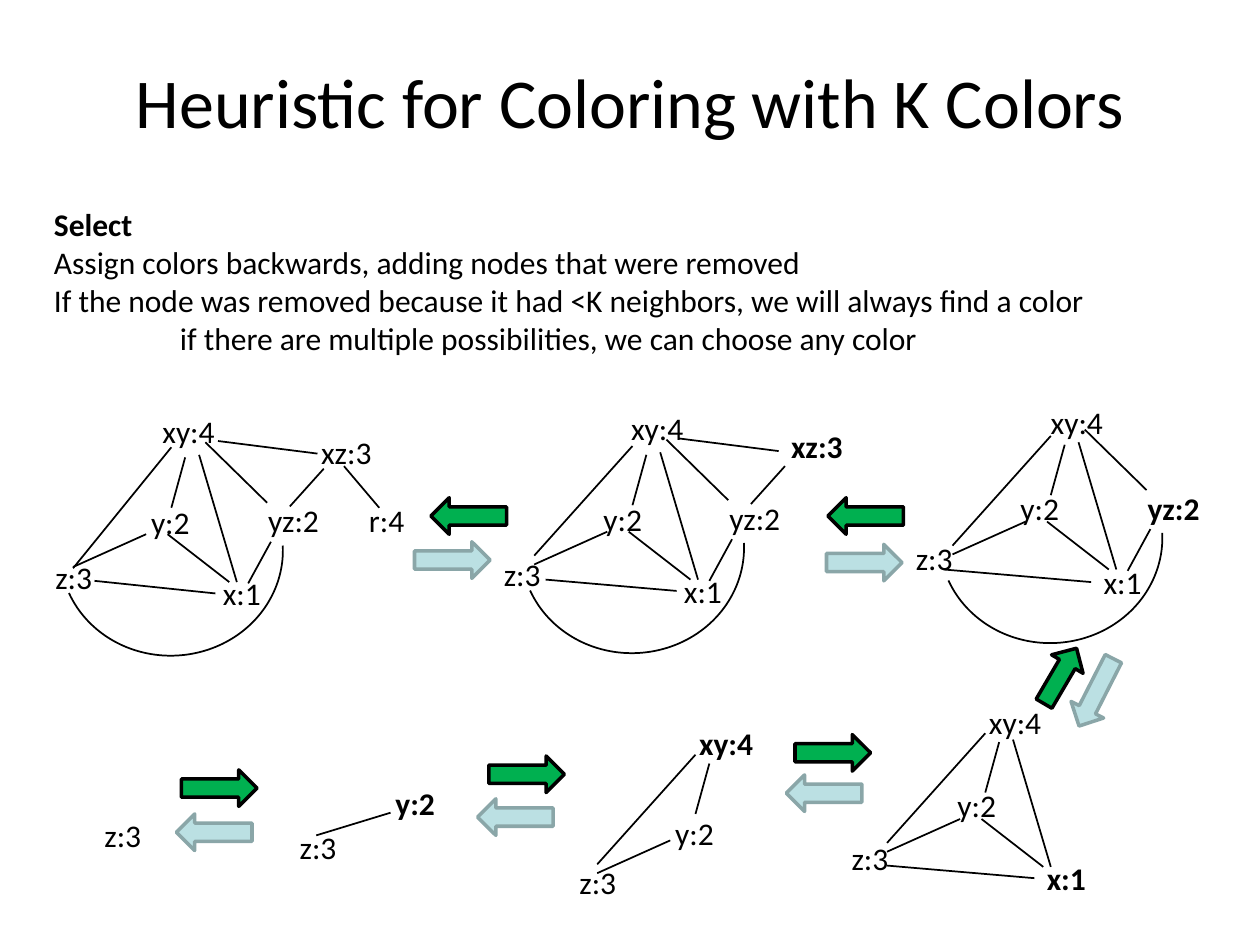
from typing import NamedTuple

from lxml.etree import SubElement
from pptx import Presentation
from pptx.dml.color import RGBColor
from pptx.enum.shapes import MSO_CONNECTOR as Link, MSO_SHAPE as Form
from pptx.enum.text import MSO_ANCHOR as Anchor, MSO_AUTO_SIZE as Fit, PP_ALIGN as Align
from pptx.oxml.ns import qn
from pptx.util import Inches, Pt

COLORS = {"ink": "000000", "green": "00B050", "pale": "BBE0E3", "gray": "8AA6A8"}
FONT = "Calibri"


class Node(NamedTuple):
    text: str
    x: float
    y: float
    bold: bool = False


class Edge(NamedTuple):
    x1: float
    y1: float
    x2: float
    y2: float


class Graph(NamedTuple):
    x: float
    y: float
    nodes: list[Node]
    edges: str = ""
    extra: tuple[Edge, ...] = ()
    arc: bool = False


class Arrow(NamedTuple):
    x: float
    y: float
    turn: float = 0
    wide: float = 0.6


EDGES = {
    "xy-x": Edge(0, 0, 0.3, 1.01),
    "y-x": Edge(-0.25, 0.63, 0.24, 1.01),
    "xy-y": Edge(-0.11, 0.02, -0.22, 0.42),
    "z-y": Edge(-1, 0.89, -0.42, 0.63),
    "xy-z": Edge(-0.22, -0.05, -1, 0.82),
    "xy-yz": Edge(0.05, -0.1, 0.54, 0.38),
    "yz-x": Edge(0.57, 0.69, 0.39, 1.02),
    "xy-xz": Edge(0.15, -0.11, 0.94, -0.01),
    "xz-yz": Edge(0.99, 0.11, 0.72, 0.41),
}
FAN = "xy-y z-y"
CORE = FAN + " xy-x y-x"
RING = CORE + " xy-yz yz-x"
FULL = RING + " xy-xz xz-yz"

GRAPHS = [
    Graph(5.24, 3.59, [
        Node("y:2", 4.69, 3.92), Node("yz:2", 5.69, 3.91), Node("x:1", 5.33, 4.49),
        Node("z:3", 3.9, 4.36), Node("xz:3", 6.18, 3.34, True), Node("xy:4", 4.91, 3.2),
    ], FULL + " xy-z", (Edge(0.13, 1.1, -0.91, 1.01),), True),
    Graph(8.56, 3.51, [
        Node("y:2", 8, 3.83), Node("yz:2", 9.01, 3.83, True), Node("x:1", 8.66, 4.42),
        Node("z:3", 7.17, 4.23), Node("xy:4", 8.24, 3.15),
    ], RING + " xy-z", (Edge(0.1, 1.11, -1.07, 1.01),), True),
    Graph(8.04, 5.87, [
        Node("y:2", 7.5, 6.19), Node("x:1", 8.21, 6.77, True),
        Node("z:3", 6.66, 6.61), Node("xy:4", 7.75, 5.53),
    ], CORE + " xy-z", (Edge(0.17, 1.1, -1, 1),)),
    Graph(5.74, 6.04, [
        Node("y:2", 5.26, 6.41), Node("z:3", 4.5, 6.8), Node("xy:4", 5.45, 5.7, True),
    ], FAN + " xy-z"),
    Graph(2.51, 6.63, [Node("y:2", 3.04, 6.17, True), Node("z:3", 2.28, 6.52)],
          extra=(Edge(0, 0, 0.59, -0.18),)),
    Graph(0.73, 6.43, [Node("z:3", 0.73, 6.43)]),
    Graph(1.58, 3.61, [
        Node("y:2", 1.1, 3.94), Node("yz:2", 2.03, 3.93), Node("x:1", 1.67, 4.51),
        Node("z:3", 0.34, 4.38), Node("xz:3", 2.45, 3.39), Node("xy:4", 1.19, 3.22),
        Node("r:4", 2.83, 3.93),
    ], FULL, (
        Edge(0.13, 1.1, -0.83, 1), Edge(-0.22, -0.06, -1, 0.9), Edge(1.15, 0.09, 1.43, 0.42),
    ), True),
]
BACK = [
    Arrow(3.29, 4.3), Arrow(6.56, 4.32), Arrow(6.24, 6.15, 180),
    Arrow(3.79, 6.34, 180), Arrow(1.4, 6.46, 180), Arrow(8.4, 5.35, 117),
]
NEXT = [
    Arrow(1.44, 6.11), Arrow(3.88, 6), Arrow(6.57, 3.95, 180),
    Arrow(8.16, 5.22, 300.4, 0.51), Arrow(6.31, 5.83), Arrow(3.42, 3.95, 180),
]
BODY = [
    "Select",
    "Assign colors backwards, adding nodes that were removed",
    "If the node was removed because it had <K neighbors, we will always find a color",
    "if there are multiple possibilities, we can choose any color",
]


def tint(name: str) -> RGBColor:
    return RGBColor.from_string(COLORS[name])


def write(slide, lines: list[str], x: float, y: float, wide: float, high: float, *,
          size: int = 18, bold: int = 0, align=Align.LEFT, anchor=Anchor.TOP,
          wrap: bool = True, fit=Fit.SHAPE_TO_FIT_TEXT, inset: float = 0) -> None:
    box = slide.shapes.add_textbox(Inches(x), Inches(y), Inches(wide), Inches(high))
    frame = box.text_frame
    frame.word_wrap = wrap
    frame.auto_size = fit
    frame.vertical_anchor = anchor
    for i, line in enumerate(lines):
        para = frame.paragraphs[0] if i == 0 else frame.add_paragraph()
        para.alignment = align
        run = para.add_run()
        run.text = line
        font = run.font
        font.name, font.size, font.bold = FONT, Pt(size), i < bold
        font.color.rgb = tint("ink")
    if inset:
        props = para._p.get_or_add_pPr()
        props.set("marL", str(Inches(inset)))
        props.set("indent", "0")


def join(slide, edge: Edge, x: float, y: float) -> None:
    line = slide.shapes.add_connector(
        Link.STRAIGHT, Inches(x + edge.x1), Inches(y + edge.y1),
        Inches(x + edge.x2), Inches(y + edge.y2))
    line.line.color.rgb = tint("ink")
    line.line.width = Pt(1)
    SubElement(line._element.spPr, qn("a:effectLst"))


def bend(slide, x: float, y: float) -> None:
    arc = slide.shapes.add_shape(Form.ARC, Inches(x), Inches(y), Inches(1.66), Inches(1.77))
    arc.shadow.inherit = False
    arc.adjustments[0], arc.adjustments[1] = 162, 42.39
    arc.rotation = 87.1
    arc.fill.background()
    arc.line.color.rgb = tint("ink")
    arc.line.width = Pt(1)


def point(slide, arrow: Arrow, fill: str, edge: str) -> None:
    shape = slide.shapes.add_shape(
        Form.RIGHT_ARROW, Inches(arrow.x), Inches(arrow.y), Inches(arrow.wide), Inches(0.29))
    shape.shadow.inherit = False
    shape.rotation = arrow.turn
    shape.fill.solid()
    shape.fill.fore_color.rgb = tint(fill)
    shape.line.color.rgb = tint(edge)
    shape.line.width = Pt(2)


def draw(slide, graph: Graph) -> None:
    for node in graph.nodes:
        wide = (0.51 if len(node.text) == 3 else 0.62) + 0.03 * node.bold
        write(slide, [node.text], node.x, node.y, wide, 0.4, bold=int(node.bold), wrap=False)
    for edge in [EDGES[key] for key in graph.edges.split()] + list(graph.extra):
        join(slide, edge, graph.x, graph.y)
    if graph.arc:
        bend(slide, graph.x - 1.05, graph.y - 0.12)


def main() -> None:
    deck = Presentation()
    deck.slide_width, deck.slide_height = Inches(10), Inches(7.5)
    slide = deck.slides.add_slide(deck.slide_layouts[6])
    write(slide, ["Heuristic for Coloring with K Colors"], 0.5, 0.17, 9, 1.25,
          size=40, align=Align.CENTER, anchor=Anchor.MIDDLE, fit=Fit.NONE)
    write(slide, BODY, 0.33, 1.58, 9.58, 1.31, bold=1, inset=1)
    for graph in GRAPHS:
        draw(slide, graph)
    for arrow in BACK:
        point(slide, arrow, "pale", "gray")
    for arrow in NEXT:
        point(slide, arrow, "green", "ink")
    deck.save("out.pptx")


if __name__ == "__main__":
    main()
